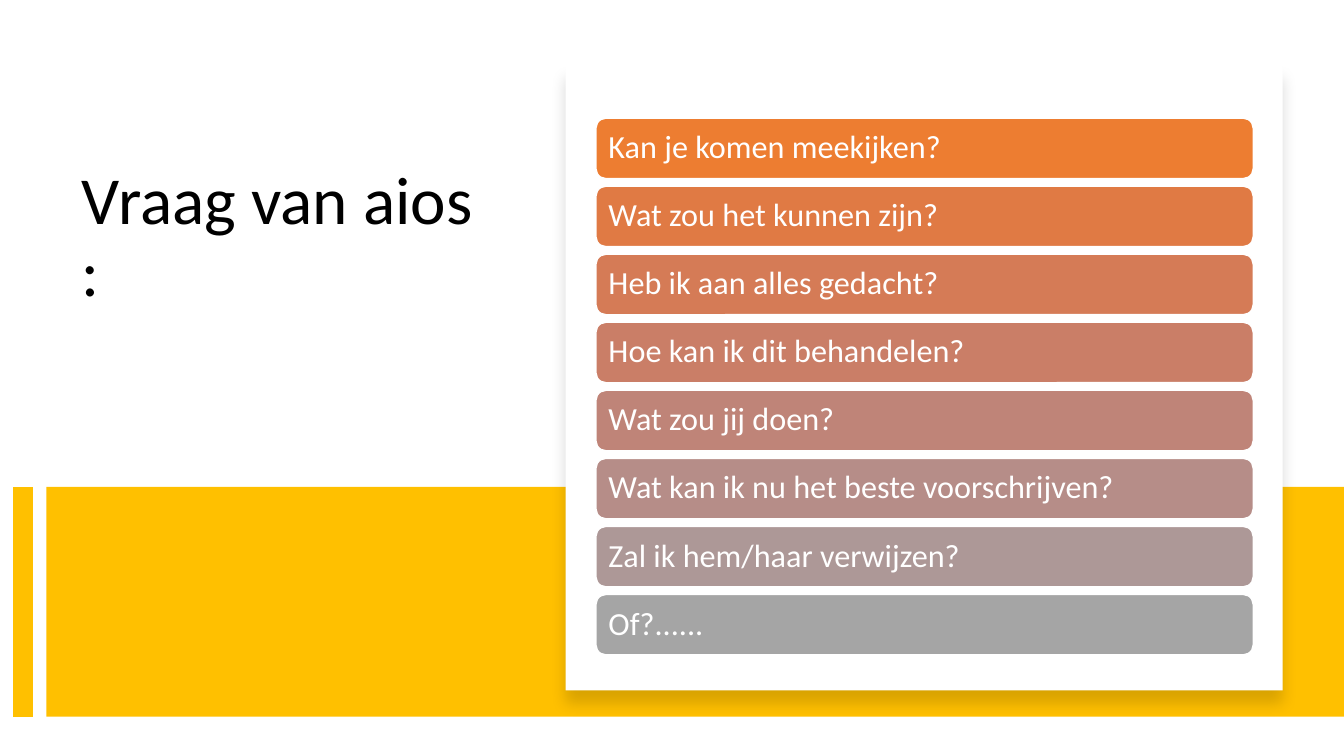
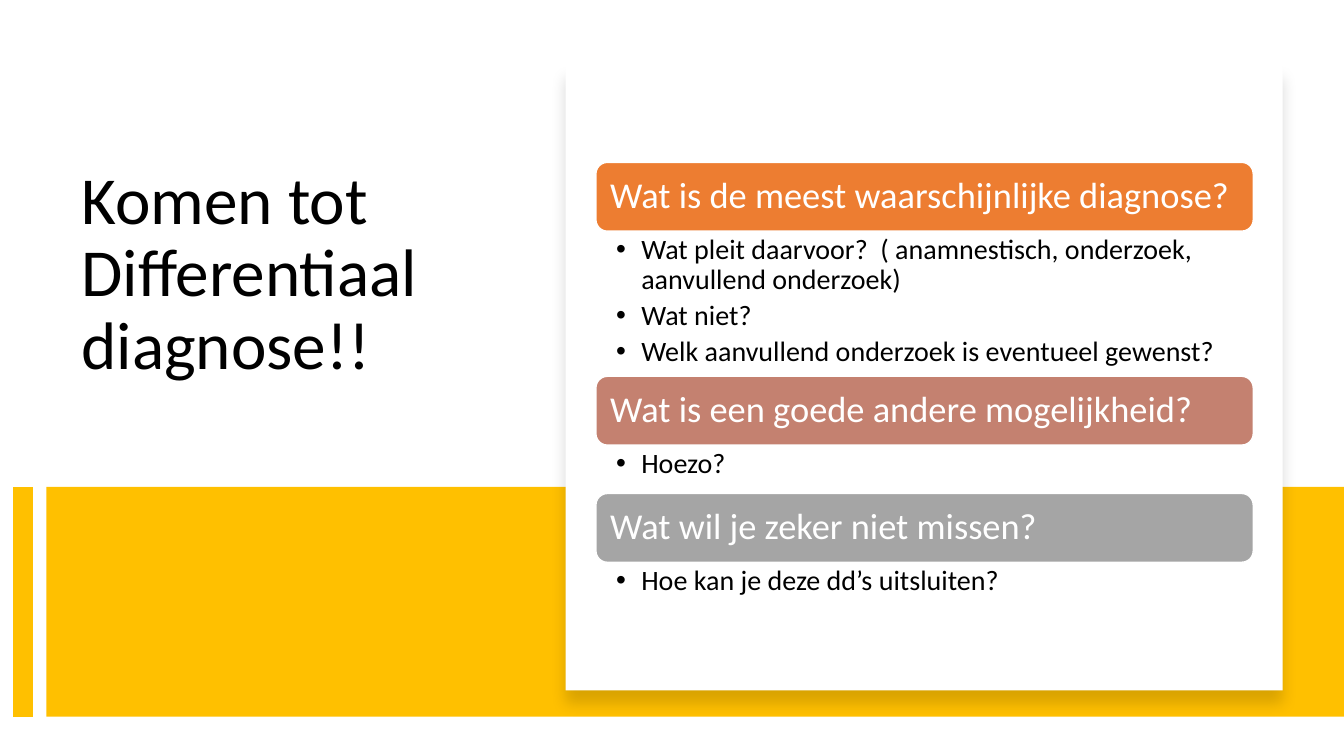
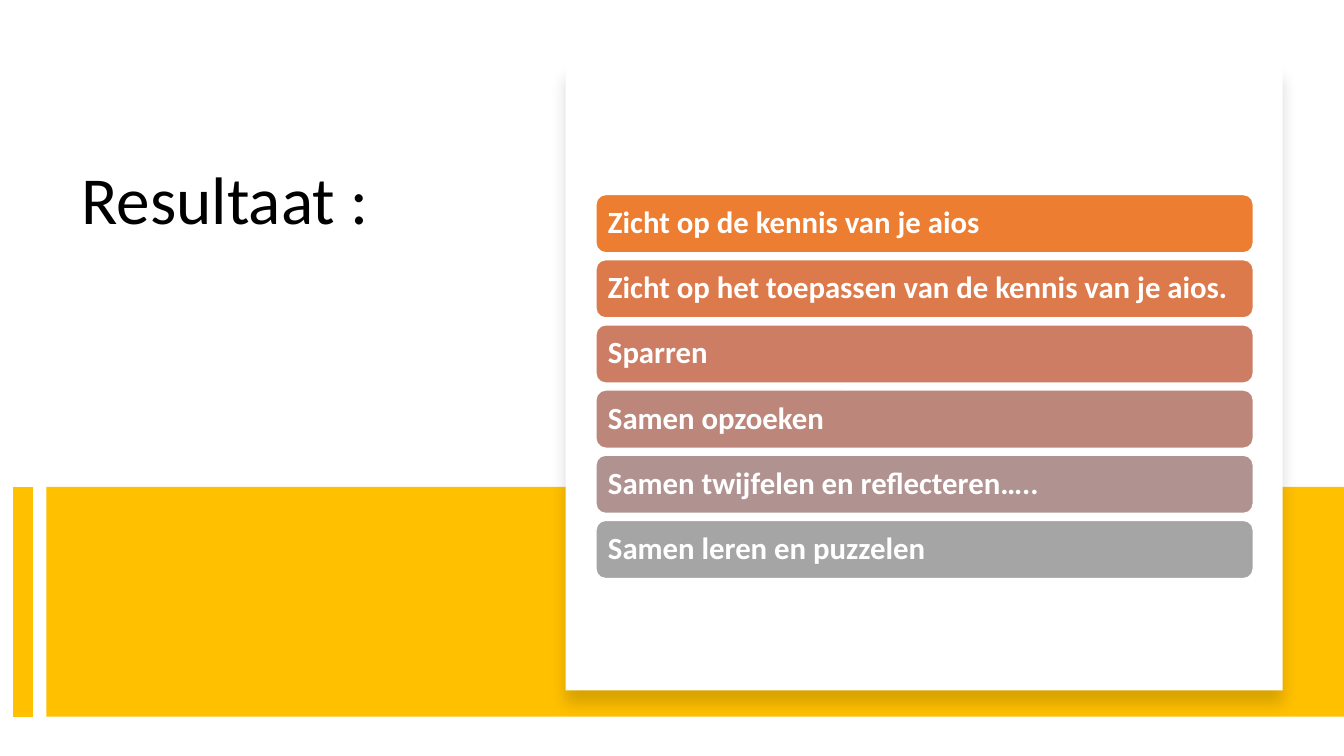
from colorsys import hls_to_rgb, rgb_to_hls

from lxml import etree
from pptx import Presentation
from pptx.dml.color import RGBColor
from pptx.enum.shapes import MSO_CONNECTOR, MSO_SHAPE
from pptx.enum.text import MSO_ANCHOR, PP_ALIGN
from pptx.oxml.ns import qn
from pptx.util import Inches, Pt

RECTANGLE = MSO_SHAPE.RECTANGLE
ROUNDED = MSO_SHAPE.ROUNDED_RECTANGLE
STRAIGHT = MSO_CONNECTOR.STRAIGHT
TOP, MIDDLE = MSO_ANCHOR.TOP, MSO_ANCHOR.MIDDLE
LEFT = PP_ALIGN.LEFT

# Shared style
FONT = "Calibri"
WHITE, BLACK, YELLOW = "FFFFFF", "000000", "FFC000"
FIRST_BAR, LAST_BAR = "ED7D31", "A5A5A5"

# Shared layout: lengths are percentages of the slide's width or height
SLIDE_WIDTH, SLIDE_HEIGHT = Inches(13.33), Inches(7.5)
BAND_LEFT, BAND_TOP, BAND_HEIGHT = 3.45, 64.4, 30.4
TITLE_BOX = (5.33, 21.33, 31.13, 39.2)
CARD_BOX = (42.09, 8.53, 53.34, 82.8)
STACK_LEFT, STACK_WIDTH, STACK_CENTRE = 44.34, 48.91, 51.13


def across(percent):
    return round(SLIDE_WIDTH * percent / 100)


def down(percent):
    return round(SLIDE_HEIGHT * percent / 100)


def place(left, top, width, height):
    return across(left), down(top), across(width), down(height)


def color(hex_string):
    return RGBColor.from_string(hex_string)


def blend(start, end, share):
    """Mix two colours by hue, lightness and saturation."""
    first, last = (rgb_to_hls(*(part / 255 for part in color(value)))
                   for value in (start, end))
    mixed = (a + (b - a) * share for a, b in zip(first, last))
    return str(RGBColor(*(round(part * 255) for part in hls_to_rgb(*mixed))))


def add_block(slide, kind, box, fill, outline=None):
    shape = slide.shapes.add_shape(kind, *place(*box))
    shape.shadow.inherit = False
    shape.fill.solid()
    shape.fill.fore_color.rgb = color(fill)
    if outline:
        shape.line.color.rgb = color(outline)
        shape.line.width = Pt(1)
    else:
        shape.line.fill.background()
    return shape


def write(shape, lines, size, font_color, anchor=TOP, insets=(0.1, 0.05), bold=False):
    frame = shape.text_frame
    frame.word_wrap = True
    frame.vertical_anchor = anchor
    frame.margin_left = frame.margin_right = Inches(insets[0])
    frame.margin_top = frame.margin_bottom = Inches(insets[1])
    frame.text = "\n".join(lines)
    for paragraph in frame.paragraphs:
        paragraph.alignment = LEFT
        paragraph.line_spacing = 0.9
        for run in paragraph.runs:
            run.font.name = FONT
            run.font.size = Pt(size)
            run.font.bold = bold
            run.font.color.rgb = color(font_color)
    return frame


def add_soft_shadow(shape):
    effects = shape.element.spPr.find(qn("a:effectLst"))
    shadow = etree.SubElement(effects, qn("a:outerShdw"), blurRad=str(Pt(11)),
                              dist=str(Pt(10)), dir="5400000", algn="t", rotWithShape="0")
    tint = etree.SubElement(shadow, qn("a:srgbClr"), val=BLACK)
    etree.SubElement(tint, qn("a:alpha"), val="15000")


def add_bullets(slide, box, lines):
    frame = write(slide.shapes.add_textbox(*place(*box)), lines, 20, BLACK,
                  insets=(0.2, 0.04))
    for paragraph in frame.paragraphs:
        paragraph.space_after = Pt(4)
        properties = paragraph._p.get_or_add_pPr()
        properties.set("marL", str(Inches(0.25)))
        properties.set("indent", str(-Inches(0.25)))
        etree.SubElement(properties, qn("a:buFont"), typeface="Arial")
        etree.SubElement(properties, qn("a:buChar"), char="•")


def add_base_slide(presentation, title):
    """Title, yellow band with its side stripe, and white card."""
    slide = presentation.slides.add_slide(presentation.slide_layouts[6])
    write(slide.shapes.add_textbox(*place(*TITLE_BOX)), [title], 48, BLACK)
    add_block(slide, RECTANGLE, (BAND_LEFT, BAND_TOP, 100 - BAND_LEFT, BAND_HEIGHT), YELLOW)
    stripe_x = across(BAND_LEFT / 2)
    stripe = slide.shapes.add_connector(STRAIGHT, stripe_x, down(BAND_TOP),
                                        stripe_x, down(BAND_TOP + BAND_HEIGHT))
    stripe.line.color.rgb = color(YELLOW)
    stripe.line.width = Pt(14)
    etree.SubElement(stripe.element.spPr, qn("a:effectLst"))
    add_soft_shadow(add_block(slide, RECTANGLE, CARD_BOX, WHITE))
    return slide


def add_stack(slide, sections, bar_height, gap, size, bold=False):
    """Bars in fading colours, each with optional bullets, centred on the card."""
    total = sum(bar_height + room for _, _, room in sections) + gap * (len(sections) - 1)
    top = STACK_CENTRE - total / 2
    for index, (heading, bullets, room) in enumerate(sections):
        fill = blend(FIRST_BAR, LAST_BAR, index / (len(sections) - 1))
        bar = add_block(slide, ROUNDED, (STACK_LEFT, top, STACK_WIDTH, bar_height), fill, WHITE)
        write(bar, [heading], size, WHITE, MIDDLE, (size / 240, 0.05), bold)
        top += bar_height
        if bullets:
            add_bullets(slide, (STACK_LEFT, top, STACK_WIDTH, room), bullets)
        top += room + gap


def plain(headings):
    return [(heading, [], 0) for heading in headings]


def main():
    presentation = Presentation()
    presentation.slide_width, presentation.slide_height = SLIDE_WIDTH, SLIDE_HEIGHT

    # Questions from the trainee
    slide = add_base_slide(presentation, "Vraag van aios :")
    add_stack(slide, plain([
        "Kan je komen meekijken?",
        "Wat zou het kunnen zijn?",
        "Heb ik aan alles gedacht?",
        "Hoe kan ik dit behandelen?",
        "Wat zou jij doen?",
        "Wat kan ik nu het beste voorschrijven?",
        "Zal ik hem/haar verwijzen?",
        "Of?......",
    ]), 8, 1, 23)

    # Differential diagnosis
    slide = add_base_slide(presentation, "Komen tot Differentiaal diagnose!!")
    add_stack(slide, [
        ("Wat is de meest waarschijnlijke diagnose?", [
            "Wat pleit daarvoor?  ( anamnestisch, onderzoek, aanvullend onderzoek)",
            "Wat niet?",
            "Welk aanvullend onderzoek is eventueel gewenst?",
        ], 19.2),
        ("Wat is een goede andere mogelijkheid?", ["Hoezo?"], 6.4),
        ("Wat wil je zeker niet missen?", ["Hoe kan je deze dd’s uitsluiten?"], 6.4),
    ], 9.1, 0, 26)

    # Result
    slide = add_base_slide(presentation, "Resultaat :")
    add_stack(slide, plain([
        "Zicht op de kennis van je aios",
        "Zicht op het toepassen van de kennis van je aios.",
        "Sparren",
        "Samen opzoeken",
        "Samen twijfelen en reflecteren…..",
        "Samen leren en puzzelen",
    ]), 7.7, 0.92, 22, bold=True)

    presentation.save("out.pptx")


if __name__ == "__main__":
    main()
